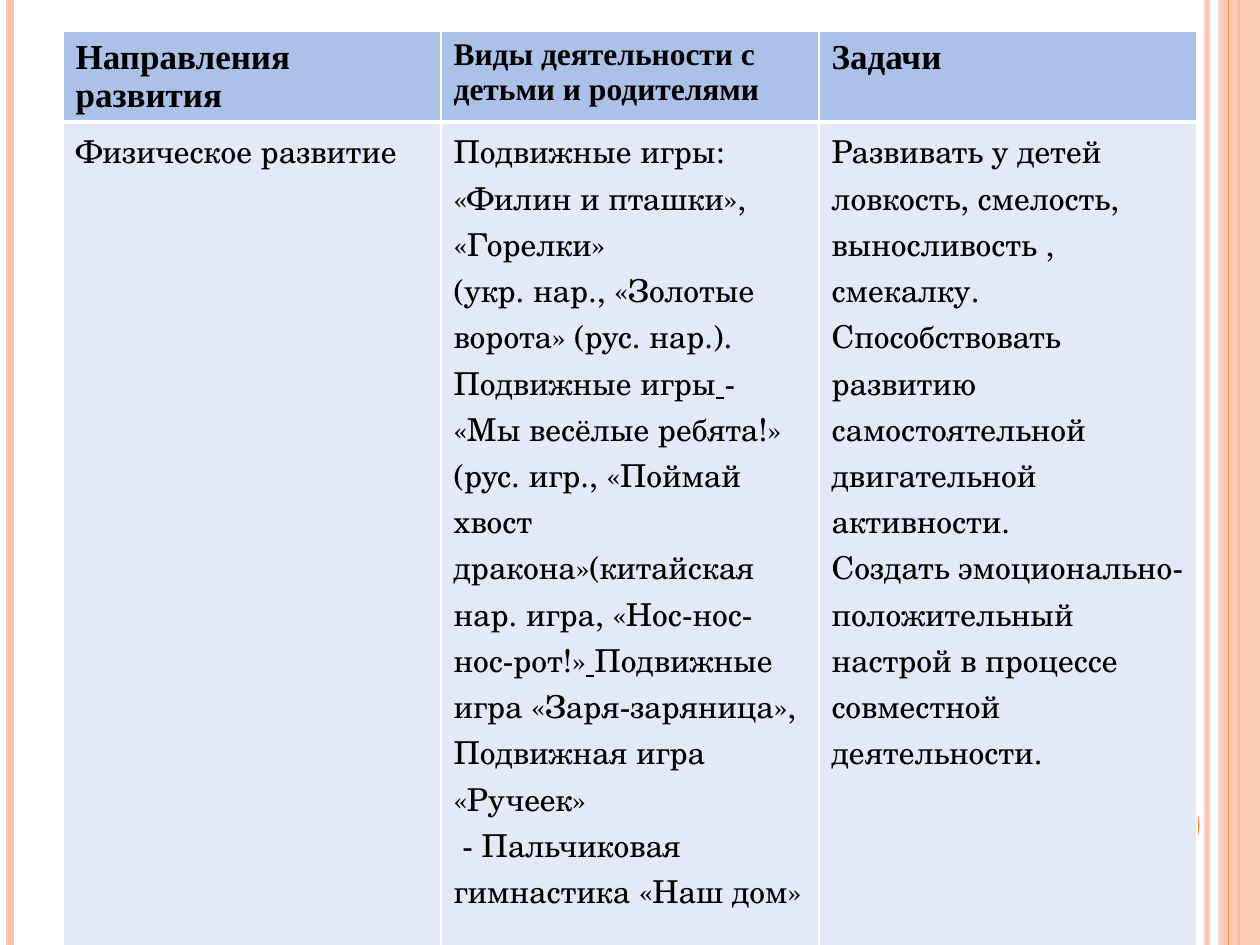
from lxml import etree
from pptx import Presentation
from pptx import util as u
from pptx.dml.color import RGBColor
from pptx.enum import shapes
from pptx.oxml import ns

WIDTH, HEIGHT = 10, 7.5
COLUMN = 3
HEADER_ROW, BODY_ROW = 0.71, 6.6
PINK, ORANGE, WHITE = "FEC3AE", "FE8637", "FFFFFF"
HEADER_FILL, BODY_FILL = "ACC1E8", "E3E9F6"
HEADER_FONT, BODY_FONT = "Times New Roman", "TeX Gyre Schola"

STRIPES = [(9.58, PINK, 3, 93), (0.08, PINK, 4.5, 100), (9.83, ORANGE, 1.5, 100)]
THIN_STRIPE = (9.75, ORANGE, 0.75, 100)

HEADINGS = [
    ("Направления развития", 20),
    ("Виды деятельности с детьми и родителями", 18),
    ("Задачи", 20),
]
DIRECTION = [["Физическое развитие"]]
ACTIVITIES = [
    ["Подвижные игры: «Филин и пташки», «Горелки»"],
    [
        "(укр. нар., «Золотые ворота» (рус. нар.).", " ",
        "Подвижные игры", " ",
        "- «Мы весёлые ребята!» (рус. игр., «Поймай хвост "
        "дракона»(китайская нар. игра, «Нос-нос-нос-рот!»", " ",
        "Подвижные игра «Заря-заряница»,",
    ],
    ["Подвижная игра «Ручеек»"],
    [" - Пальчиковая гимнастика «Наш дом»"],
]
GOALS = [
    ["Развивать у детей ловкость, смелость, выносливость , смекалку."],
    ["Способствовать развитию самостоятельной двигательной активности."],
    ["Создать эмоционально-положительный настрой в процессе совместной деятельности."],
]


def paint(color_format, color, opacity=100):
    """Set a colour from a hex string, with an optional opacity in percent."""
    color_format.rgb = RGBColor.from_string(color)
    if opacity < 100:
        element = color_format._xFill.find(ns.qn("a:srgbClr"))
        etree.SubElement(element, ns.qn("a:alpha"), val=str(opacity * 1000))


def add_stripe(slide, x, color, weight, opacity):
    """Draw a vertical line over the full height of the slide."""
    stripe = slide.shapes.add_connector(
        shapes.MSO_CONNECTOR.STRAIGHT, u.Inches(x), 0, u.Inches(x), u.Inches(HEIGHT))
    stripe.line.width = u.Pt(weight)
    stripe.line.fill.solid()
    paint(stripe.line.fill.fore_color, color, opacity)
    etree.SubElement(stripe._element.spPr, ns.qn("a:effectLst"))


def add_block(slide, kind, x, y, width, height, color, opacity=100):
    """Draw a filled shape without outline."""
    block = slide.shapes.add_shape(kind, *map(u.Inches, (x, y, width, height)))
    block.shadow.inherit = False
    block.line.fill.background()
    block.fill.solid()
    paint(block.fill.fore_color, color, opacity)


def add_border(cell, side, weight):
    """Give one side of a cell a white border."""
    border = etree.SubElement(
        cell._tc.get_or_add_tcPr(), ns.qn(f"a:ln{side}"), w=str(u.Pt(weight)))
    fill = etree.SubElement(border, ns.qn("a:solidFill"))
    etree.SubElement(fill, ns.qn("a:srgbClr"), val=WHITE)


def fill_cell(cell, paragraphs, size, font, fill, bold=False, top=1, bottom=1):
    """Write paragraphs into a cell, underlining the runs that are only a space."""
    for side, weight in (("L", 1), ("R", 1), ("T", top), ("B", bottom)):
        add_border(cell, side, weight)
    cell.fill.solid()
    paint(cell.fill.fore_color, fill)
    for index, runs in enumerate(paragraphs):
        frame = cell.text_frame
        paragraph = frame.add_paragraph() if index else frame.paragraphs[0]
        paragraph.font.name = font
        paragraph.font.size = u.Pt(size)
        paragraph.font.bold = bold
        paint(paragraph.font.color, "000000")
        for words in runs:
            run = paragraph.add_run()
            run.text = words
            if words.isspace():
                run.font.underline = True


def add_plan(slide):
    """Add the table of directions, activities and goals."""
    plan = slide.shapes.add_table(
        2, len(HEADINGS), u.Inches(0.5), u.Inches(0.25),
        u.Inches(COLUMN * len(HEADINGS)), u.Inches(HEADER_ROW + BODY_ROW)).table
    for row, height in zip(plan.rows, (HEADER_ROW, BODY_ROW)):
        row.height = u.Inches(height)
    for column, (heading, size) in enumerate(HEADINGS):
        fill_cell(plan.cell(0, column), [[heading]], size, HEADER_FONT,
                  HEADER_FILL, bold=True, bottom=3)
    for column, paragraphs in enumerate((DIRECTION, ACTIVITIES, GOALS)):
        fill_cell(plan.cell(1, column), paragraphs, 18, BODY_FONT, BODY_FILL, top=3)


def main():
    """Build the slide and save it."""
    deck = Presentation()
    deck.slide_width, deck.slide_height = u.Inches(WIDTH), u.Inches(HEIGHT)
    slide = deck.slides.add_slide(deck.slide_layouts[6])
    for stripe in STRIPES:
        add_stripe(slide, *stripe)
    add_block(slide, shapes.MSO_SHAPE.RECTANGLE, 9.67, 0, 0.33, HEIGHT, PINK, 87)
    add_stripe(slide, *THIN_STRIPE)
    add_block(slide, shapes.MSO_SHAPE.OVAL, 8.92, 6.25, 0.6, 0.6, ORANGE)
    add_plan(slide)
    deck.save("out.pptx")


if __name__ == "__main__":
    main()
